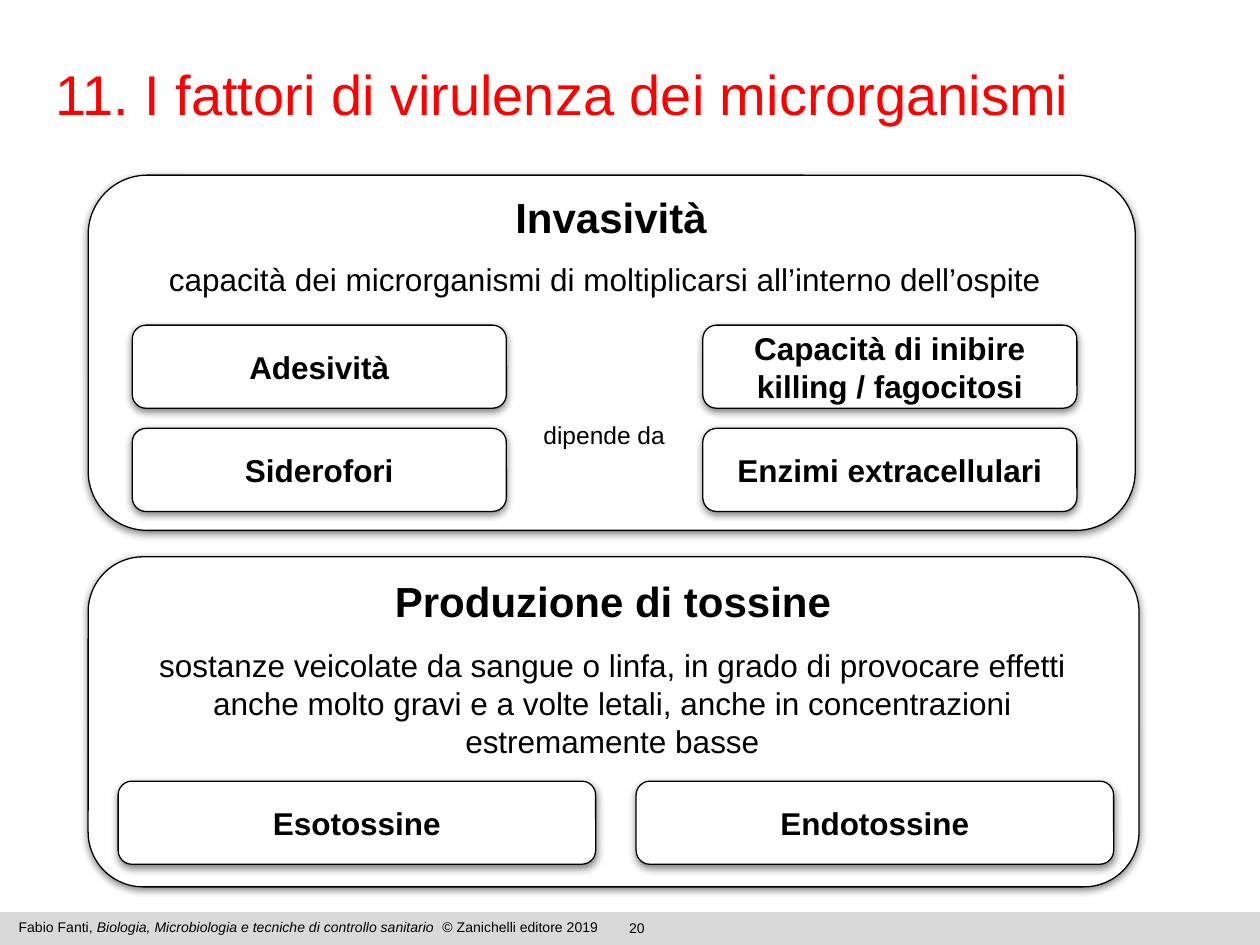
from lxml import etree
from pptx import Presentation
from pptx.dml.color import RGBColor
from pptx.enum.shapes import MSO_SHAPE
from pptx.enum.text import MSO_ANCHOR, MSO_AUTO_SIZE, PP_ALIGN
from pptx.oxml.ns import qn
from pptx.util import Pt

ROUNDED = MSO_SHAPE.ROUNDED_RECTANGLE
RECTANGLE = MSO_SHAPE.RECTANGLE
TOP, MIDDLE = MSO_ANCHOR.TOP, MSO_ANCHOR.MIDDLE
LEFT, CENTER = PP_ALIGN.LEFT, PP_ALIGN.CENTER
NO_AUTOFIT = MSO_AUTO_SIZE.NONE

FONT = "Arial"
BLACK, WHITE, RED, GREY = "000000", "FFFFFF", "FF0000", "D9D9D9"
TITLE_ONLY = 5
INSET = 7.2
FOOTER_INSETS = (INSET, 3.6)


def color(hex_code):
    return RGBColor.from_string(hex_code)


def write(shape, text, size=18, bold=False, ink=BLACK, align=CENTER,
          anchor=TOP, insets=(INSET, INSET)):
    """Fill a shape with one paragraph; text is a string or (string, italic) pairs."""
    frame = shape.text_frame
    frame.word_wrap = True
    frame.auto_size = NO_AUTOFIT
    frame.vertical_anchor = anchor
    frame.margin_left = frame.margin_right = Pt(insets[0])
    frame.margin_top = frame.margin_bottom = Pt(insets[1])
    para = frame.paragraphs[0]
    para.alignment = align
    para.space_before = Pt(0)
    pieces = [(text, False)] if isinstance(text, str) else text
    for words, italic in pieces:
        span = para.add_run()
        span.text = words
        span.font.name = FONT
        span.font.size = Pt(size)
        span.font.bold = bold
        span.font.italic = italic
        span.font.color.rgb = color(ink)


def paint(shape, fill, line=None):
    shape.fill.solid()
    shape.fill.fore_color.rgb = color(fill)
    if line:
        shape.line.color.rgb = color(line)
        shape.line.width = Pt(0.75)
    else:
        shape.line.fill.background()


def add_shadow(shape):
    """Soft half-transparent black shadow falling straight down."""
    effects = etree.SubElement(shape.element.spPr, qn("a:effectLst"))
    shadow = etree.SubElement(
        effects, qn("a:outerShdw"), blurRad=str(Pt(4.5)), dist=str(Pt(1.5)),
        dir="5400000", algn="ctr", rotWithShape="0")
    tint = etree.SubElement(shadow, qn("a:srgbClr"), val=BLACK)
    etree.SubElement(tint, qn("a:alpha"), val="50000")


def add_card(page, left, top, width, height, text=None):
    card = page.shapes.add_shape(ROUNDED, Pt(left), Pt(top), Pt(width), Pt(height))
    paint(card, WHITE, BLACK)
    add_shadow(card)
    if text:
        write(card, text, bold=True, anchor=MIDDLE)


def add_text(page, left, top, width, height, text, **style):
    box = page.shapes.add_textbox(Pt(left), Pt(top), Pt(width), Pt(height))
    write(box, text, **style)


def add_title(page, text):
    title = page.shapes.title
    title.left, title.top = Pt(25.2), Pt(30.2)
    title.width, title.height = Pt(694.8), Pt(69.8)
    paint(title, WHITE, WHITE)
    write(title, text, size=32, ink=RED, align=LEFT, insets=(6.5, 3.6))


def add_footer(page):
    band = page.shapes.add_shape(RECTANGLE, Pt(0), Pt(521.3), Pt(720), Pt(18.7))
    band.shadow.inherit = False
    paint(band, GREY)
    add_text(page, 283.7, 522, 160.6, 12.2, "20", size=8, insets=FOOTER_INSETS)
    credit = [
        ("Fabio Fanti, ", False),
        ("Biologia, Microbiologia e tecniche di controllo sanitario", True),
        ("  © Zanichelli editore 2019", False),
    ]
    add_text(page, 3.6, 521.3, 362.9, 17.3, credit, size=8, align=LEFT,
             insets=FOOTER_INSETS)


def add_invasiveness(page):
    add_card(page, 50.4, 100.1, 598.3, 203)
    add_text(page, 247.7, 102.4, 203, 45, "Invasività", size=24, bold=True)
    add_text(page, 75.6, 141.1, 540, 27.4,
             "capacità dei microrganismi di moltiplicarsi all’interno dell’ospite")
    factors = [
        ("Adesività", "Capacità di inibire killing / fagocitosi"),
        ("Siderofori", "Enzimi extracellulari"),
    ]
    for row, names in enumerate(factors):
        for column, name in enumerate(names):
            add_card(page, 75.6 + 326 * column, 185.8 + 59 * row, 213.8, 47.5, name)
    add_text(page, 298.1, 232.6, 94.3, 27.4, "dipende da", size=14)


def add_toxins(page):
    add_card(page, 50.4, 318.2, 600.5, 188.6)
    add_text(page, 80, 321.4, 540.7, 62, "Produzione di tossine", size=24, bold=True)
    add_text(page, 64.8, 362.2, 570.2, 67.7,
             "sostanze veicolate da sangue o linfa, in grado di provocare effetti "
             "anche molto gravi e a volte letali, anche in concentrazioni "
             "estremamente basse")
    for column, name in enumerate(["Esotossine", "Endotossine"]):
        add_card(page, 67.5 + 296 * column, 446.4, 272.9, 47.5, name)


def main():
    deck = Presentation()
    deck.slide_width, deck.slide_height = Pt(720), Pt(540)
    page = deck.slides.add_slide(deck.slide_layouts[TITLE_ONLY])
    add_footer(page)
    add_title(page, "11. I fattori di virulenza dei microrganismi")
    add_invasiveness(page)
    add_toxins(page)
    deck.save("out.pptx")


if __name__ == "__main__":
    main()
